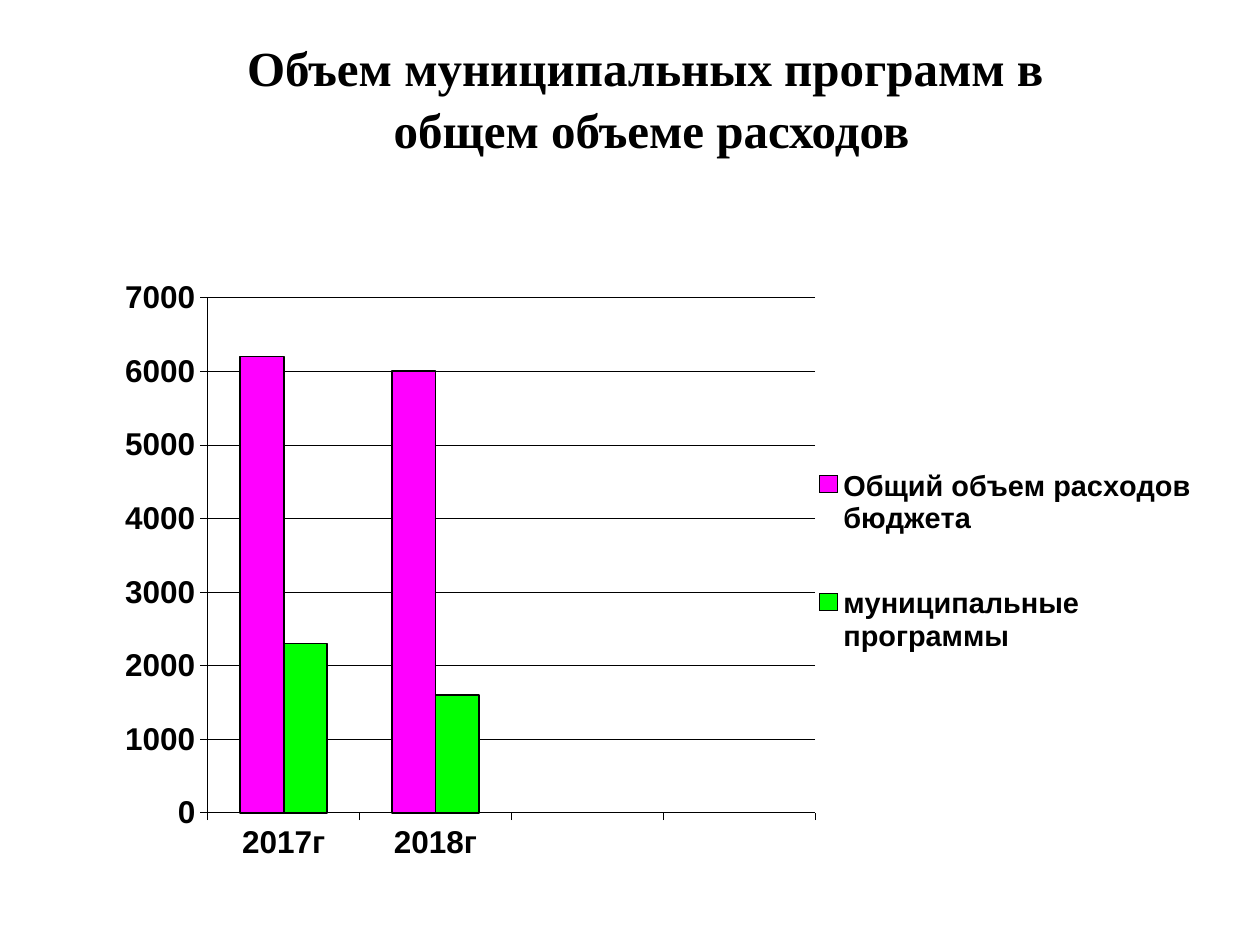
from dataclasses import dataclass

from pptx import Presentation
from pptx.chart.data import CategoryChartData
from pptx.dml.color import RGBColor
from pptx.enum import chart as ch, text as tx
from pptx.oxml import parse_xml
from pptx.oxml.ns import nsdecls
from pptx.util import Pt


@dataclass(frozen=True)
class Theme:
    ink: RGBColor = RGBColor(0, 0, 0)
    paper: RGBColor = RGBColor(255, 255, 255)
    total: RGBColor = RGBColor(255, 0, 255)
    programs: RGBColor = RGBColor(0, 255, 0)
    title_font: str = "Times New Roman"
    chart_font: str = "Arial"
    title_size: float = 28
    axis_size: float = 18
    legend_size: float = 16.5
    thin: float = 0.25
    outline: float = 1


THEME = Theme()
YEARS = ["2017г", "2018г", "", ""]  # the last two places stay free
SPENDING = [
    ("Общий объем расходов бюджета", (6200, 6000, None, None), THEME.total),
    ("муниципальные программы", (2300, 1600, None, None), THEME.programs),
]


def format_font(font, size, name):
    font.size, font.name, font.bold = Pt(size), name, True
    font.color.rgb = THEME.ink


def write_line(paragraph, line, *, size, name, align, before):
    paragraph.alignment = align
    paragraph.space_before = Pt(before)
    run = paragraph.add_run()
    run.text = line
    format_font(run.font, size, name)


def format_line(line, width):
    line.color.rgb = THEME.ink
    line.width = Pt(width)


def manual_layout(x, y, w, h, inner=False):
    target = '<c:layoutTarget val="inner"/>' if inner else ""
    sizes = "".join(f'<c:{tag} val="{value}"/>'
                    for tag, value in zip("xywh", (x, y, w, h)))
    return parse_xml(
        f'<c:layout {nsdecls("c")}><c:manualLayout>{target}'
        f'<c:xMode val="edge"/><c:yMode val="edge"/>{sizes}'
        '</c:manualLayout></c:layout>')


def add_title(slide, lines):
    title = slide.shapes.title
    title.left, title.top, title.width, title.height = (
        Pt(48.24), Pt(18), Pt(648), Pt(90))
    frame = title.text_frame
    frame.word_wrap = True
    frame.auto_size = tx.MSO_AUTO_SIZE.NONE
    frame.vertical_anchor = tx.MSO_ANCHOR.TOP
    for index, line in enumerate(lines):
        paragraph = frame.add_paragraph() if index else frame.paragraphs[0]
        write_line(paragraph, line, size=THEME.title_size,
                   name=THEME.title_font, align=tx.PP_ALIGN.CENTER, before=1.5)


def format_axis(axis):
    axis.major_tick_mark = ch.XL_TICK_MARK.OUTSIDE
    axis.minor_tick_mark = ch.XL_TICK_MARK.NONE
    format_font(axis.tick_labels.font, THEME.axis_size, THEME.chart_font)
    format_line(axis.format.line, THEME.thin)


def format_legend(chart):
    chart.has_legend = True
    legend = chart.legend
    legend.position = ch.XL_LEGEND_POSITION.RIGHT
    legend.include_in_layout = False
    format_font(legend.font, THEME.legend_size, THEME.chart_font)
    # The layout follows the legend position
    for old in legend._element.findall("{*}layout"):
        legend._element.remove(old)
    legend._element.find("{*}legendPos").addnext(
        manual_layout(0.656, 0.24, 0.34, 0.46))


def add_spending_chart(slide):
    data = CategoryChartData()
    data.categories = YEARS
    for name, values, _ in SPENDING:
        data.add_series(name, values)
    chart = slide.shapes.add_chart(
        ch.XL_CHART_TYPE.COLUMN_CLUSTERED,
        Pt(41.76), Pt(153.36), Pt(646.56), Pt(356.4), data).chart
    chart.has_title = False
    format_font(chart.font, THEME.axis_size, THEME.chart_font)

    # Axes and grid
    format_axis(chart.category_axis)
    chart.category_axis.tick_label_position = ch.XL_TICK_LABEL_POSITION.LOW
    amounts = chart.value_axis
    format_axis(amounts)
    amounts.minimum_scale, amounts.maximum_scale = 0, 7000
    amounts.major_unit = 1000
    amounts.has_major_gridlines = True
    format_line(amounts.major_gridlines.format.line, THEME.thin)

    # Columns
    columns = chart.plots[0]
    columns.gap_width, columns.overlap = 150, 0
    columns.vary_by_categories = False
    for series, (_, _, color) in zip(columns.series, SPENDING):
        series.format.fill.solid()
        series.format.fill.fore_color.rgb = color
        format_line(series.format.line, THEME.outline)

    # Plot area and legend places
    plot_area = chart._chartSpace.chart.plotArea
    for old in plot_area.findall("{*}layout"):
        plot_area.remove(old)
    plot_area.insert(0, manual_layout(0.119, 0.047, 0.537, 0.826, inner=True))
    format_legend(chart)


def main():
    deck = Presentation()
    deck.slide_width, deck.slide_height = Pt(720), Pt(540)
    slide = deck.slides.add_slide(deck.slide_layouts[5])
    slide.background.fill.solid()
    slide.background.fill.fore_color.rgb = THEME.paper
    add_title(slide, ["Объем муниципальных программ в ",
                      "общем объеме расходов"])
    add_spending_chart(slide)
    deck.save("out.pptx")


if __name__ == "__main__":
    main()
